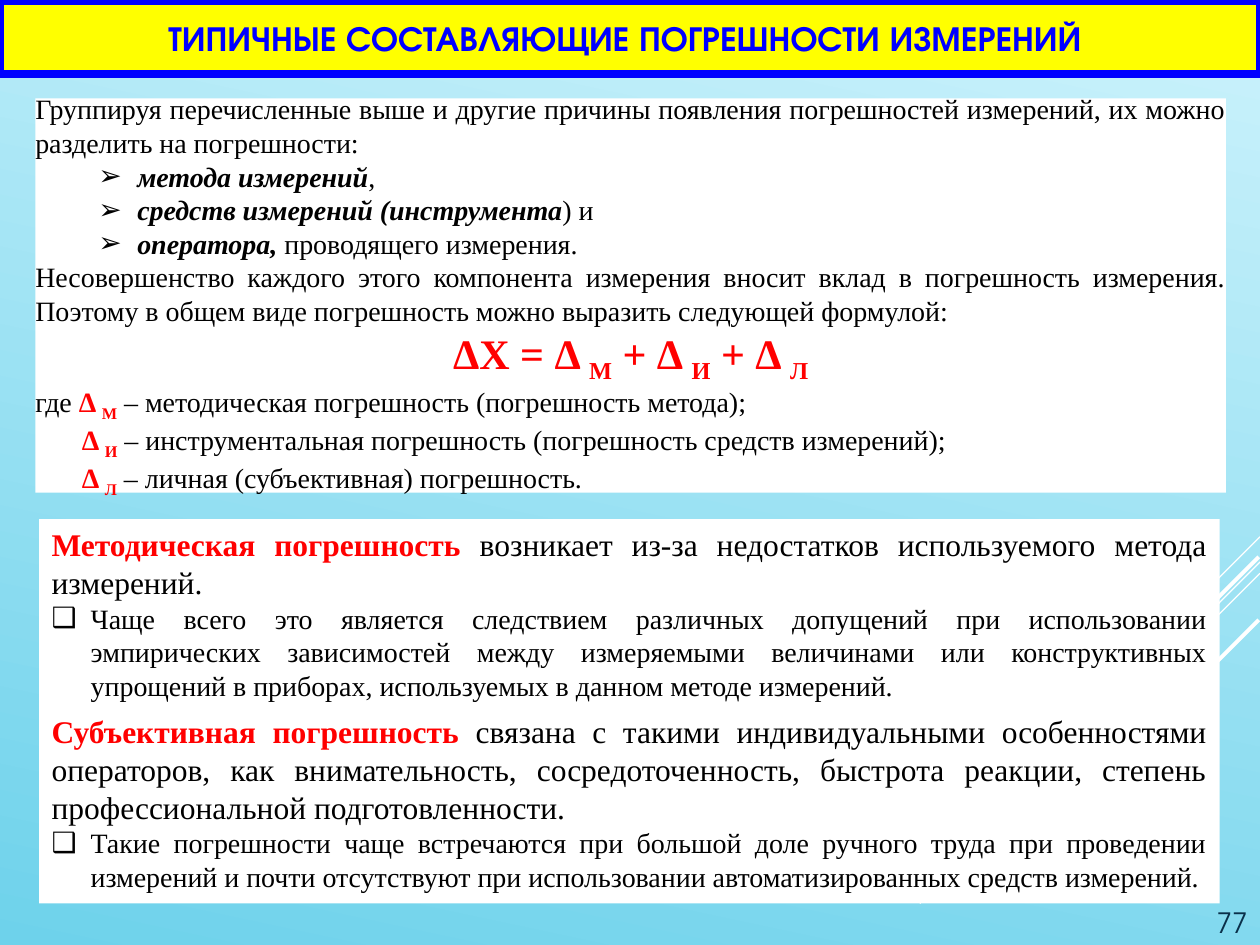
from dataclasses import dataclass

from lxml.etree import SubElement
from pptx import Presentation
from pptx.dml.color import RGBColor
from pptx.enum.shapes import MSO_CONNECTOR
from pptx.enum.text import MSO_ANCHOR, MSO_AUTO_SIZE, PP_ALIGN
from pptx.oxml.ns import qn
from pptx.util import Inches, Pt


@dataclass(frozen=True)
class Theme:
    black: RGBColor = RGBColor(0, 0, 0)
    white: RGBColor = RGBColor(255, 255, 255)
    red: RGBColor = RGBColor(255, 0, 0)
    blue: RGBColor = RGBColor(0, 0, 255)
    yellow: RGBColor = RGBColor(255, 255, 0)
    navy: RGBColor = RGBColor(0x0A, 0x30, 0x4A)
    sky_light: RGBColor = RGBColor(0xC8, 0xF1, 0xFB)
    sky_dark: RGBColor = RGBColor(0x6E, 0xD2, 0xEB)
    display_font: str = "TeX Gyre Adventor"
    text_font: str = "Times New Roman"
    title: int = 20
    formula: int = 24
    lead: int = 18
    body: int = 16


THEME = Theme()
ARROW, SQUARE = "➢", "❑"
HANG = 0.31

# x1, y1, x2, y2, width in points
RAYS = [
    (10, 4.26, 9.17, 5.09, 0.75),
    (10, 4.46, 7.3, 7.17, 0.75),
    (10, 4.55, 8.28, 6.27, 0.75),
    (9.99, 4.42, 8.42, 5.99, 2.25),
    (9.99, 4.92, 8.85, 6.06, 2.25),
]


def add_span(para, text, size=THEME.body, color=THEME.black, bold=False,
             italic=False, font=THEME.text_font, subscript=False):
    span = para.add_run()
    span.text = text
    span.font.name = font
    span.font.size = Pt(size)
    span.font.bold = bold
    span.font.italic = italic
    span.font.color.rgb = color
    if subscript:
        span._r.get_or_add_rPr().set("baseline", "-25000")


def add_delta(para, index, size=THEME.body, prefix=""):
    """Write a red error symbol with its subscript index."""
    add_span(para, prefix + "Δ ", size, THEME.red, bold=True)
    add_span(para, index, size, THEME.red, bold=True, subscript=True)


def add_para(frame, align=PP_ALIGN.JUSTIFY, indent=0, bullet=None, space_before=0):
    first = frame.paragraphs[0]
    para = first if not first.runs else frame.add_paragraph()
    para.alignment = align
    para.space_before = Pt(space_before)
    properties = para._p.get_or_add_pPr()
    properties.set("marL", str(Inches(indent)))
    properties.set("indent", str(Inches(-HANG if bullet else 0)))
    if bullet:
        SubElement(properties, qn("a:buChar"), char=bullet)
    else:
        SubElement(properties, qn("a:buNone"))
    return para


def place(box, left, top, width, height):
    box.left, box.top = Inches(left), Inches(top)
    box.width, box.height = Inches(width), Inches(height)


def set_frame(box, anchor, inset_x=0.1, inset_y=0.05):
    frame = box.text_frame
    frame.word_wrap = True
    frame.auto_size = MSO_AUTO_SIZE.NONE
    frame.vertical_anchor = anchor
    frame.margin_left = frame.margin_right = Inches(inset_x)
    frame.margin_top = frame.margin_bottom = Inches(inset_y)
    return frame


def fill_box(box, color):
    box.fill.solid()
    box.fill.fore_color.rgb = color


def paint_background(page):
    fill = page.background.fill
    fill.gradient()
    fill.gradient_angle = 258
    stops = [(0.04, THEME.sky_light), (1, THEME.sky_dark)]
    for stop, (position, color) in zip(fill.gradient_stops, stops):
        stop.position = position
        stop.color.rgb = color


def add_rays(page):
    """Draw the slanted lines behind everything else."""
    for order, (x1, y1, x2, y2, width) in enumerate(RAYS):
        ray = page.shapes.add_connector(
            MSO_CONNECTOR.STRAIGHT, Inches(x1), Inches(y1), Inches(x2), Inches(y2))
        ray.line.color.rgb = THEME.white
        ray.line.width = Pt(width)
        SubElement(ray._element.spPr, qn("a:effectLst"))
        page.shapes._spTree.insert(2 + order, ray._element)


def fill_title(box):
    place(box, 0, 0.01, 10, 0.58)
    SubElement(box._element.spPr, qn("a:prstGeom"), prst="roundRect")
    fill_box(box, THEME.yellow)
    box.line.color.rgb = THEME.blue
    box.line.width = Pt(4.5)
    para = add_para(set_frame(box, MSO_ANCHOR.MIDDLE), PP_ALIGN.CENTER)
    add_span(para, "ТИПИЧНЫЕ СОСТАВЛЯЮЩИЕ ПОГРЕШНОСТИ ИЗМЕРЕНИЙ ",
             THEME.title, THEME.blue, bold=True, font=THEME.display_font)


def fill_components(box):
    place(box, 0.28, 0.78, 9.45, 3.13)
    fill_box(box, THEME.white)
    frame = set_frame(box, MSO_ANCHOR.MIDDLE, 0, 0)
    add_span(add_para(frame), "Группируя перечисленные выше и другие причины появления "
             "погрешностей измерений, их можно разделить на погрешности:")
    for source, rest in [("метода измерений", ", "),
                         ("средств измерений (инструмента", ") и "),
                         ("оператора,", " проводящего измерения. ")]:
        para = add_para(frame, indent=0.81, bullet=ARROW)
        add_span(para, source, bold=True, italic=True)
        add_span(para, rest)
    add_span(add_para(frame), "Несовершенство каждого этого компонента измерения вносит "
             "вклад в погрешность измерения. Поэтому в общем виде погрешность можно "
             "выразить следующей формулой:")

    formula = add_para(frame, PP_ALIGN.CENTER)
    for prefix, index in [("ΔX = ", "M"), (" + ", "И"), (" + ", "Л")]:
        add_delta(formula, index, THEME.formula, prefix)

    for opening, indent, index, meaning in [
            ("где ", 0, "M", "методическая погрешность (погрешность метода);"),
            ("", 0.37, "И", "инструментальная погрешность (погрешность средств измерений);"),
            ("", 0.37, "Л", "личная (субъективная) погрешность.")]:
        para = add_para(frame, PP_ALIGN.LEFT, indent)
        if opening:
            add_span(para, opening)
        add_delta(para, index)
        add_span(para, " – " + meaning)


def fill_definitions(box):
    place(box, 0.31, 4.12, 9.37, 3.05)
    fill_box(box, THEME.white)
    frame = set_frame(box, MSO_ANCHOR.TOP)
    for gap, term, definition, detail in [
            (0, "Методическая погрешность ",
             "возникает из-за недостатков используемого метода измерений. ",
             "Чаще всего это является следствием различных допущений при использовании "
             "эмпирических зависимостей между измеряемыми величинами или конструктивных "
             "упрощений в приборах, используемых в данном методе измерений."),
            (6, "Субъективная погрешность ",
             "связана с такими индивидуальными особенностями операторов, как "
             "внимательность, сосредоточенность, быстрота реакции, степень "
             "профессиональной подготовленности. ",
             "Такие погрешности чаще встречаются при большой доле ручного труда при "
             "проведении измерений и почти отсутствуют при использовании "
             "автоматизированных средств измерений.")]:
        para = add_para(frame, space_before=gap)
        add_span(para, term, THEME.lead, THEME.red, bold=True)
        add_span(para, definition, THEME.lead)
        add_span(add_para(frame, indent=HANG, bullet=SQUARE), detail)


def add_page_number(page, number):
    box = page.shapes.add_textbox(Inches(9.06), Inches(6.77), Inches(0.94), Inches(0.73))
    para = add_para(set_frame(box, MSO_ANCHOR.BOTTOM), PP_ALIGN.RIGHT)
    add_span(para, number, color=THEME.navy, font=THEME.display_font)


def main():
    deck = Presentation()
    deck.slide_width, deck.slide_height = Inches(10), Inches(7.5)
    page = deck.slides.add_slide(deck.slide_layouts.get_by_name("Two Content"))
    title, components, definitions = page.placeholders
    paint_background(page)
    add_rays(page)
    fill_title(title)
    fill_components(components)
    fill_definitions(definitions)
    add_page_number(page, "77")
    deck.save("out.pptx")


if __name__ == "__main__":
    main()
